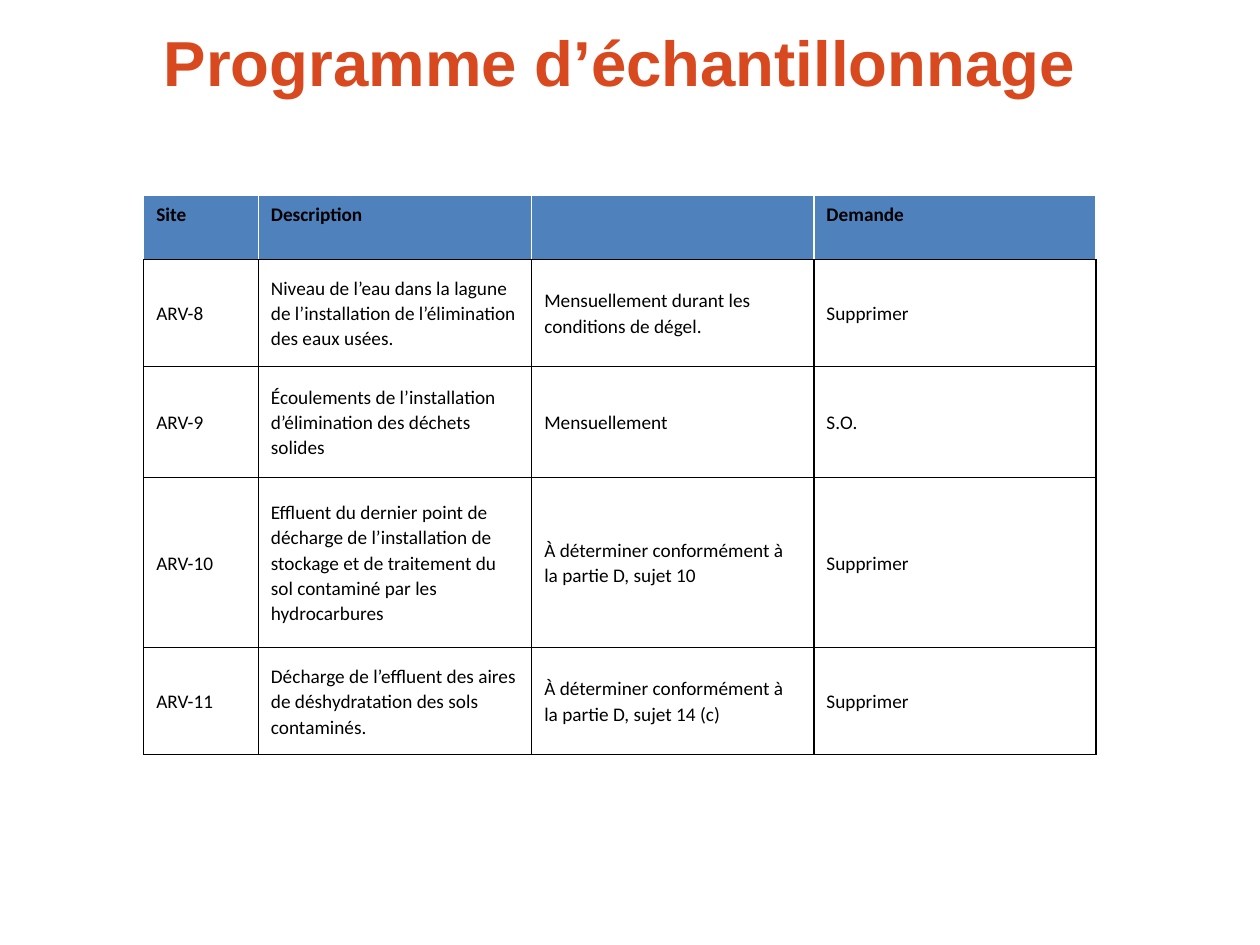
from lxml import etree
from pptx import Presentation
from pptx.dml.color import RGBColor
from pptx.enum.text import MSO_ANCHOR, PP_ALIGN
from pptx.oxml.ns import qn
from pptx.util import Inches, Pt

MIDDLE, TOP = MSO_ANCHOR.MIDDLE, MSO_ANCHOR.TOP
CENTER = PP_ALIGN.CENTER
BLACK, WHITE, BLUE, ORANGE = "000000", "FFFFFF", "4F81BD", "D8491F"

COLUMN_WIDTHS = [0.91, 2.17, 2.24, 2.24]
ROW_HEIGHTS = [0.51, 0.85, 0.88, 1.35, 0.85]
ROWS = [
    ["Site", "Description", "", "Demande"],
    ["ARV-8",
     "Niveau de l’eau dans la lagune de l’installation de l’élimination des eaux usées.",
     "Mensuellement durant les conditions de dégel.", "Supprimer"],
    ["ARV-9", "Écoulements de l’installation d’élimination des déchets solides",
     "Mensuellement", "S.O."],
    ["ARV-10",
     "Effluent du dernier point de décharge de l’installation de stockage et de "
     "traitement du sol contaminé par les hydrocarbures",
     "À déterminer conformément à la partie D, sujet 10", "Supprimer"],
    ["ARV-11", "Décharge de l’effluent des aires de déshydratation des sols contaminés.",
     "À déterminer conformément à la partie D, sujet 14 (c)", "Supprimer"],
]


def add_run(paragraph, text, font, size, color, bold):
    run = paragraph.add_run()
    run.text = text
    run.font.name = font
    run.font.size = Pt(size)
    run.font.bold = bold
    run.font.color.rgb = RGBColor.from_string(color)


def set_borders(cell, colors):
    """Draw 1 pt cell borders; colors are left, right, top, bottom."""
    properties = cell._tc.get_or_add_tcPr()
    for position, (side, color) in enumerate(zip("LRTB", colors)):
        line = etree.Element(qn(f"a:ln{side}"), w=str(Pt(1)))
        fill = etree.SubElement(line, qn("a:solidFill"))
        etree.SubElement(fill, qn("a:srgbClr"), val=color)
        properties.insert(position, line)


prs = Presentation()
prs.slide_width, prs.slide_height = Inches(10), Inches(7.5)
slide = prs.slides.add_slide(prs.slide_layouts[5])

title = slide.shapes.title
title.left, title.top = Inches(1.14), Inches(0.01)
title.width, title.height = Inches(7.56), Inches(0.95)
title.text_frame.vertical_anchor = MIDDLE
heading = title.text_frame.paragraphs[0]
heading.alignment = CENTER
add_run(heading, "Programme d’échantillonnage", "Arial", 36.3, ORANGE, True)

program = slide.shapes.add_table(
    len(ROWS), len(COLUMN_WIDTHS), Inches(1.14), Inches(1.55),
    Inches(sum(COLUMN_WIDTHS)), Inches(sum(ROW_HEIGHTS))).table
program.horz_banding = False
for column, width in zip(program.columns, COLUMN_WIDTHS):
    column.width = Inches(width)

for r, (height, texts) in enumerate(zip(ROW_HEIGHTS, ROWS)):
    program.rows[r].height = Inches(height)
    is_header = r == 0
    for c, text in enumerate(texts):
        cell = program.cell(r, c)
        cell.vertical_anchor = TOP if is_header else MIDDLE
        if is_header:
            cell.fill.solid()
            cell.fill.fore_color.rgb = RGBColor.from_string(BLUE)
            set_borders(cell, [WHITE, WHITE, WHITE, BLACK])
        else:
            cell.fill.background()
            set_borders(cell, [BLACK] * 4)
        if text:
            paragraph = cell.text_frame.paragraphs[0]
            paragraph.line_spacing = 1.07
            paragraph.space_after = Pt(8)
            add_run(paragraph, text, "Calibri", 11, BLACK, is_header)

prs.save("out.pptx")
